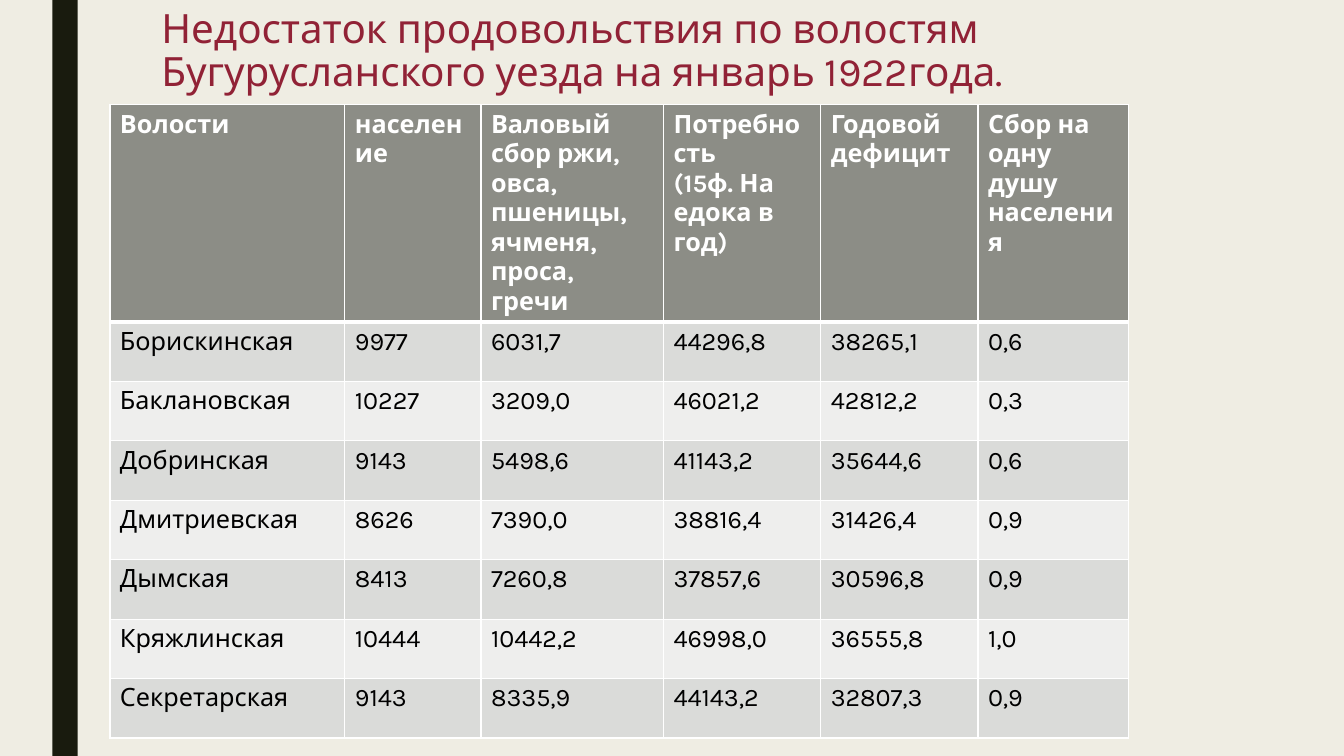
from lxml import etree
from pptx import Presentation, util as u
from pptx.dml import color
from pptx.enum import shapes, text
from pptx.oxml import ns

WIDTH, HEIGHT = 13.33, 7.5
FONT = "Karla"
BORDER = "FFFFFF"
COLUMN_WIDTHS = [2.33, 1.35, 1.81, 1.56, 1.56, 1.49]
ROW_HEIGHT = 0.59
TITLE = "Недостаток продовольствия по волостям Бугурусланского уезда на январь 1922года."
HEADERS = [
    "Волости",
    "население",
    "Валовый сбор ржи, овса, пшеницы, ячменя, проса, гречи",
    "Потребность\n(15ф. На едока в год)",
    "Годовой дефицит",
    "Сбор на одну душу населения",
]
VOLOSTS = [
    ["Борискинская", "9977", "6031,7", "44296,8", "38265,1", "0,6"],
    ["Баклановская", "10227", "3209,0", "46021,2", "42812,2", "0,3"],
    ["Добринская", "9143", "5498,6", "41143,2", "35644,6", "0,6"],
    ["Дмитриевская", "8626", "7390,0", "38816,4", "31426,4", "0,9"],
    ["Дымская", "8413", "7260,8", "37857,6", "30596,8", "0,9"],
    ["Кряжлинская", "10444", "10442,2", "46998,0", "36555,8", "1,0"],
    ["Секретарская", "9143", "8335,9", "44143,2", "32807,3", "0,9"],
]


def rgb(value):
    return color.RGBColor.from_string(value)


def paint(fill, value):
    fill.solid()
    fill.fore_color.rgb = rgb(value)


def write(frame, content, size=18, ink="000000", bold=False, spacing=None):
    frame.word_wrap = True
    frame.text = content
    for paragraph in frame.paragraphs:
        paragraph.alignment = text.PP_ALIGN.LEFT
        if spacing:
            paragraph.line_spacing = spacing
        for run in paragraph.runs:
            run.font.name = FONT
            run.font.size = u.Pt(size)
            run.font.bold = bold
            run.font.color.rgb = rgb(ink)


def add_border(cell, side, points):
    properties = cell._tc.get_or_add_tcPr()
    line = etree.SubElement(properties, ns.qn("a:ln" + side), w=str(u.Pt(points)))
    fill = etree.SubElement(line, ns.qn("a:solidFill"))
    etree.SubElement(fill, ns.qn("a:srgbClr"), val=BORDER)


def add_side_bar(slide, left, top, width, height):
    bar = slide.shapes.add_shape(
        shapes.MSO_SHAPE.RECTANGLE,
        u.Inches(left), u.Inches(top), u.Inches(width), u.Inches(height))
    bar.shadow.inherit = False
    paint(bar.fill, "191B0E")
    bar.line.fill.background()


def place_title(slide, left, top, width, height):
    title = slide.shapes.title
    title.left, title.top = u.Inches(left), u.Inches(top)
    title.width, title.height = u.Inches(width), u.Inches(height)
    frame = title.text_frame
    frame.auto_size = text.MSO_AUTO_SIZE.NONE
    frame.vertical_anchor = text.MSO_ANCHOR.MIDDLE
    write(frame, TITLE, size=28.8, ink="912236", spacing=0.89)


def add_harvest_table(slide, left, top):
    rows = [HEADERS] + VOLOSTS
    table = slide.shapes.add_table(
        len(rows), len(HEADERS), u.Inches(left), u.Inches(top),
        u.Inches(sum(COLUMN_WIDTHS)), u.Inches(ROW_HEIGHT * len(rows))).table
    for column, width in zip(table.columns, COLUMN_WIDTHS):
        column.width = u.Inches(width)
    for index, values in enumerate(rows):
        table.rows[index].height = u.Inches(ROW_HEIGHT)
        header = index == 0
        background = "8C8D86" if header else ("EEEEED", "DADBD9")[index % 2]
        borders = {"L": 1, "R": 1, "T": 3 if index == 1 else 1, "B": 3 if header else 1}
        for cell, value in zip(table.rows[index].cells, values):
            for side, points in borders.items():
                add_border(cell, side, points)
            paint(cell.fill, background)
            write(cell.text_frame, value, ink="FFFFFF" if header else "000000", bold=header)


def main():
    presentation = Presentation()
    presentation.slide_width = u.Inches(WIDTH)
    presentation.slide_height = u.Inches(HEIGHT)
    slide = presentation.slides.add_slide(presentation.slide_layouts.get_by_name("Title Only"))
    paint(slide.background.fill, "EFEDE3")
    add_side_bar(slide, 0.52, 0, 0.25, HEIGHT)
    place_title(slide, 1.5, 0, 10.5, 1.04)
    add_harvest_table(slide, 1.09, 1.04)
    presentation.save("out.pptx")


if __name__ == "__main__":
    main()
